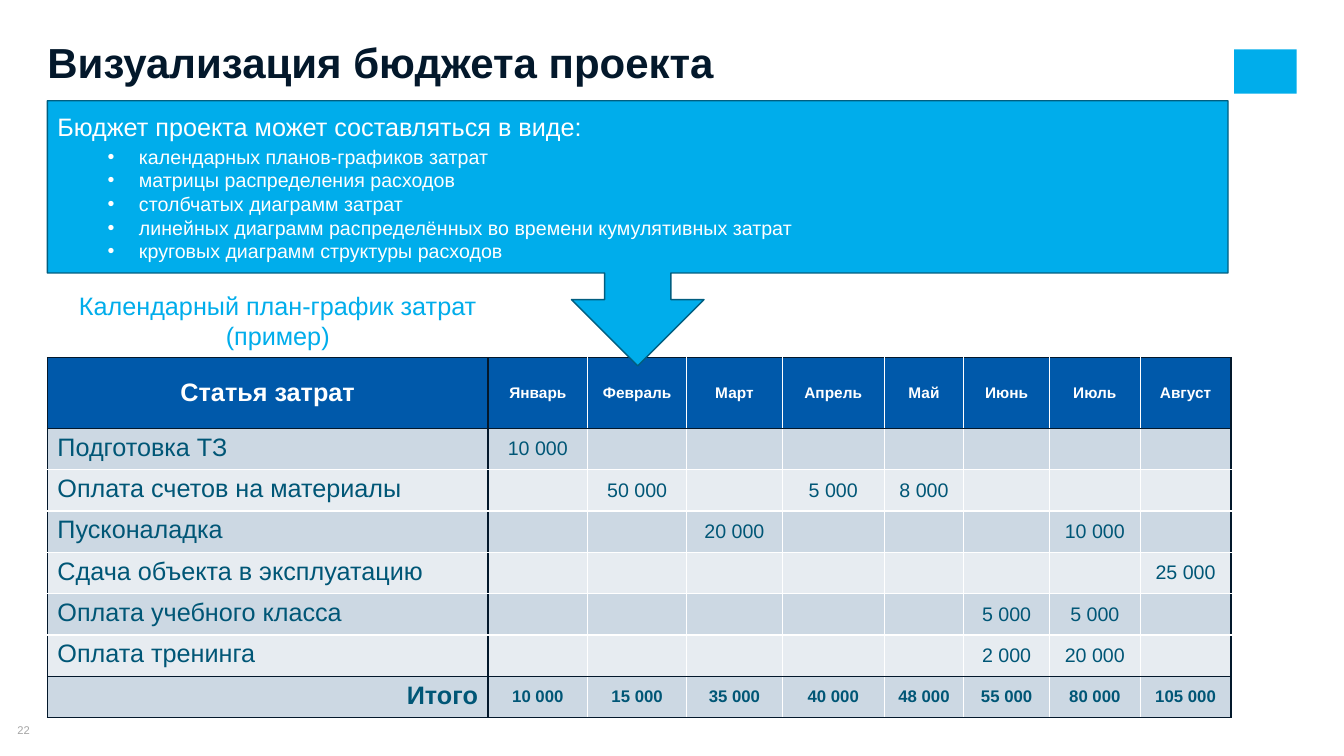
from dataclasses import dataclass, field

from lxml import etree
from pptx import Presentation
from pptx import util as u
from pptx.dml.color import RGBColor
from pptx.enum import shapes, text
from pptx.oxml import ns

COLORS = {
    "white": "FFFFFF", "navy": "03182B", "sky": "00ADEB", "outline": "015E80",
    "header": "0059AA", "band": "CCD8E3", "light": "E7ECF1", "teal": "005676",
    "gray": "A6A6A6",
}
LEFT, CENTER, RIGHT = text.PP_ALIGN.LEFT, text.PP_ALIGN.CENTER, text.PP_ALIGN.RIGHT
TOP, MIDDLE = text.MSO_ANCHOR.TOP, text.MSO_ANCHOR.MIDDLE


@dataclass(frozen=True)
class Style:
    size: float
    color: str
    bold: bool = False
    align: text.PP_ALIGN = LEFT


@dataclass(frozen=True)
class Label:
    lines: tuple[str, ...]
    box: tuple[float, float, float, float]
    style: Style
    anchor: text.MSO_ANCHOR = TOP
    inset: tuple[float, float] = (0, 0)
    spacing: float = 1


@dataclass(frozen=True)
class CostRow:
    name: str
    amounts: dict[str, str] = field(default_factory=dict)


MONTHS = ("Январь", "Февраль", "Март", "Апрель", "Май", "Июнь", "Июль", "Август")
COSTS = (
    CostRow("Подготовка ТЗ", {"Январь": "10 000"}),
    CostRow("Оплата счетов на материалы",
            {"Февраль": "50 000", "Апрель": "5 000", "Май": "8 000"}),
    CostRow("Пусконаладка", {"Март": "20 000", "Июль": "10 000"}),
    CostRow("Сдача объекта в эксплуатацию", {"Август": "25 000"}),
    CostRow("Оплата учебного класса", {"Июнь": "5 000", "Июль": "5 000"}),
    CostRow("Оплата тренинга", {"Июнь": "2 000", "Июль": "20 000"}),
)
TOTALS = ("10 000", "15 000", "35 000", "40 000", "48 000", "55 000", "80 000", "105 000")
COL_WIDTHS = (4.37, 0.99, 0.98, 0.95, 1.01, 0.79, 0.85, 0.9, 0.9)
HEADER_HEIGHT, ROW_HEIGHT = 0.7, 0.41

BUDGET_FORMS = (
    "календарных планов-графиков затрат",
    "матрицы распределения расходов",
    "столбчатых диаграмм затрат",
    "линейных диаграмм распределённых во времени кумулятивных затрат",
    "круговых диаграмм структуры расходов",
)
TITLE = Label(("Визуализация бюджета проекта",), (0.47, 0.46, 10.51, 0.4),
              Style(30, "navy", True), spacing=0.8)
NUMBER = Label(("22",), (0, 7.18, 0.47, 0.13), Style(8, "gray", align=CENTER), MIDDLE)
CAPTION = Label(("Календарный план-график затрат", "(пример)"), (0.35, 2.83, 4.81, 0.71),
                Style(18, "sky", align=CENTER), inset=(0.1, 0.05))


def rgb(name: str) -> RGBColor:
    return RGBColor.from_string(COLORS[name])


def add_run(p, content: str, style: Style) -> None:
    p.alignment = style.align
    r = p.add_run()
    r.text = content
    r.font.name = "Arial"
    r.font.size = u.Pt(style.size)
    r.font.bold = style.bold
    r.font.color.rgb = rgb(style.color)


def next_paragraph(tf, index: int):
    return tf.add_paragraph() if index else tf.paragraphs[0]


def add_label(s, label: Label) -> None:
    tf = s.shapes.add_textbox(*map(u.Inches, label.box)).text_frame
    tf.word_wrap = True
    tf.vertical_anchor = label.anchor
    tf.margin_left = tf.margin_right = u.Inches(label.inset[0])
    tf.margin_top = tf.margin_bottom = u.Inches(label.inset[1])
    for i, line in enumerate(label.lines):
        p = next_paragraph(tf, i)
        p.line_spacing = label.spacing
        add_run(p, line, label.style)


def add_block(s, kind: shapes.MSO_SHAPE, box: tuple[float, float, float, float]):
    sp = s.shapes.add_shape(kind, *map(u.Inches, box))
    sp.shadow.inherit = False
    sp.fill.solid()
    sp.fill.fore_color.rgb = rgb("sky")
    return sp


def add_callout(s) -> None:
    sp = add_block(s, shapes.MSO_SHAPE.DOWN_ARROW_CALLOUT, (0.47, 1, 11.71, 2.63))
    sp.line.color.rgb = rgb("outline")
    sp.line.width = u.Pt(1)
    tf = sp.text_frame
    tf.word_wrap = True
    tf.vertical_anchor = MIDDLE
    p = tf.paragraphs[0]
    p.space_after = u.Pt(2.4)
    add_run(p, "Бюджет проекта может составляться в виде:", Style(18, "white"))
    for form in BUDGET_FORMS:
        p = tf.add_paragraph()
        p.level = 1
        add_run(p, form, Style(14, "white"))
        props = p._p.get_or_add_pPr()
        props.set("marL", str(u.Inches(0.81)))
        props.set("indent", str(u.Inches(-0.31)))
        etree.SubElement(props, ns.qn("a:buFont"), typeface="Arial")
        etree.SubElement(props, ns.qn("a:buChar"), char="•")


def set_borders(cell, row: int, col: int, last_row: int, last_col: int) -> None:
    navy_sides = {
        "L": col <= 1,
        "R": col in (0, last_col),
        "T": row in (0, 1, last_row),
        "B": row in (0, last_row - 1, last_row),
    }
    props = cell._tc.get_or_add_tcPr()
    for side, is_navy in navy_sides.items():
        ln = etree.SubElement(props, ns.qn(f"a:ln{side}"), w=str(u.Pt(1)))
        fill = etree.SubElement(ln, ns.qn("a:solidFill"))
        etree.SubElement(fill, ns.qn("a:srgbClr"), val=COLORS["navy" if is_navy else "white"])


def cell_style(row: int, col: int, last_row: int) -> Style:
    if row == 0:
        return Style(11 if col else 18, "white", True, CENTER)
    if row == last_row:
        return Style(12, "teal", True, CENTER) if col else Style(18, "teal", True, RIGHT)
    return Style(14, "teal", align=CENTER) if col else Style(18, "teal")


def add_cost_table(s) -> None:
    rows = [("Статья затрат", *MONTHS)]
    rows += [(c.name, *(c.amounts.get(m, "") for m in MONTHS)) for c in COSTS]
    rows.append(("Итого", *TOTALS))
    heights = [HEADER_HEIGHT] + [ROW_HEIGHT] * (len(rows) - 1)
    box = (0.47, 3.55, sum(COL_WIDTHS), sum(heights))
    table = s.shapes.add_table(len(rows), len(COL_WIDTHS), *map(u.Inches, box)).table
    table.first_row = table.horz_banding = False
    for column, width in zip(table.columns, COL_WIDTHS):
        column.width = u.Inches(width)
    last_row, last_col = len(rows) - 1, len(COL_WIDTHS) - 1
    for i, values in enumerate(rows):
        table.rows[i].height = u.Inches(heights[i])
        fill = "header" if i == 0 else "band" if i % 2 else "light"
        for j, value in enumerate(values):
            cell = table.cell(i, j)
            set_borders(cell, i, j, last_row, last_col)
            cell.fill.solid()
            cell.fill.fore_color.rgb = rgb(fill)
            cell.vertical_anchor = MIDDLE if i == 0 or j else TOP
            if value:
                add_run(cell.text_frame.paragraphs[0], value, cell_style(i, j, last_row))


def main() -> None:
    prs = Presentation()
    prs.slide_width, prs.slide_height = u.Inches(13.33), u.Inches(7.5)
    s = prs.slides.add_slide(prs.slide_layouts[6])
    emblem = add_block(s, shapes.MSO_SHAPE.RECTANGLE, (12.24, 0.49, 0.62, 0.44))
    emblem.line.fill.background()
    add_label(s, NUMBER)
    add_label(s, TITLE)
    add_cost_table(s)
    add_callout(s)
    add_label(s, CAPTION)
    prs.save("out.pptx")


if __name__ == "__main__":
    main()
